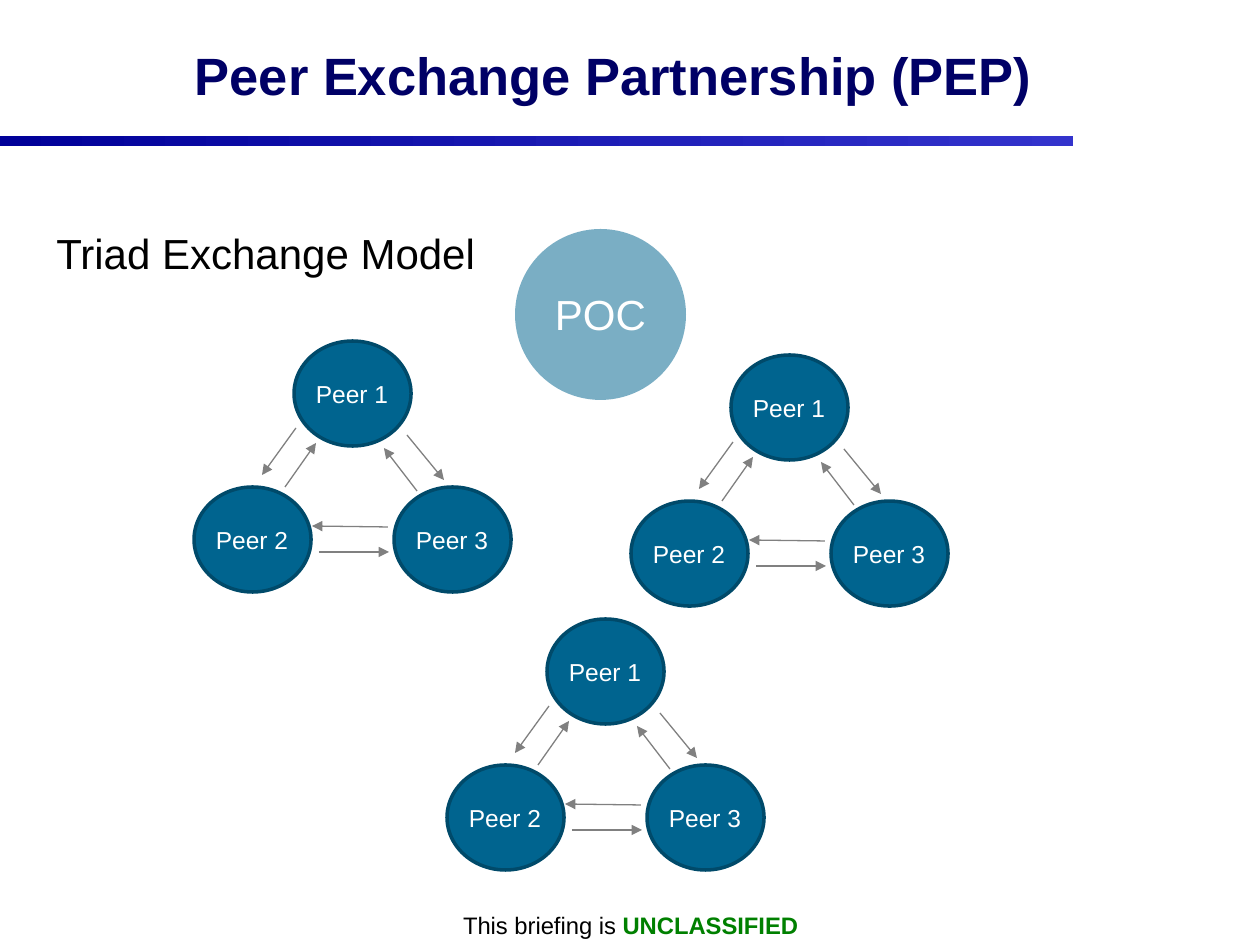
from pptx import Presentation
from pptx import util as u
from pptx.dml.color import RGBColor
from pptx.enum import shapes, text
from pptx.oxml import parse_xml
from pptx.oxml.ns import nsdecls, qn

PX = u.Inches(1) / 126
FONT = "Arial"
BLUE, EDGE, GREY, WHITE, BLACK = "00648F", "004A6A", "808080", "FFFFFF", "000000"

TRIADS = [(194, 341), (631, 355), (447, 619)]
PEERS = {"Peer 1": (100, 0), "Peer 2": (0, 146), "Peer 3": (200, 146)}
PEER_SIZE = (117, 105)
EXCHANGES = [
    ((125, 211), (195, 211)), ((194, 186), (118, 185)),
    ((213, 94), (250, 139)), ((223, 150), (190, 107)),
    ((102, 87), (68, 134)), ((91, 146), (122, 102)),
]


def px(*lengths):
    return [u.Emu(round(length * PX)) for length in lengths]


def colour(value):
    return RGBColor.from_string(value)


def apply(target, values):
    for name, value in values.items():
        setattr(target, name, value)


def write(shape, spans, size, align=text.PP_ALIGN.LEFT, **frame_format):
    """Fill a shape with one paragraph of (words, colour, bold) spans."""
    frame = shape.text_frame
    apply(frame, frame_format)
    para = frame.paragraphs[0]
    para.alignment = align
    for words, hue, bold in spans:
        span = para.add_run()
        span.text = words
        apply(span.font, {"name": FONT, "size": u.Pt(size), "bold": bold})
        span.font.color.rgb = colour(hue)


def add_label(page, bounds, spans, size, align=text.PP_ALIGN.CENTER, **frame_format):
    values = {"word_wrap": True, "vertical_anchor": text.MSO_ANCHOR.MIDDLE,
              "auto_size": text.MSO_AUTO_SIZE.SHAPE_TO_FIT_TEXT}
    box = page.shapes.add_textbox(*px(*bounds))
    write(box, spans, size, align, **{**values, **frame_format})


def add_plain(page, kind, bounds):
    shape = page.shapes.add_shape(kind, *px(*bounds))
    shape.shadow.inherit = False
    shape.line.fill.background()
    return shape


def add_circle(page, bounds):
    circle = add_plain(page, shapes.MSO_SHAPE.OVAL, bounds)
    circle.fill.solid()
    circle.fill.fore_color.rgb = colour(BLUE)
    return circle


def add_arrow(page, start, end):
    arrow = page.shapes.add_connector(shapes.MSO_CONNECTOR.STRAIGHT, *px(*start, *end))
    arrow.line.color.rgb = colour(GREY)
    arrow.line.width = u.Pt(0.75)
    arrow.line._get_or_add_ln().append(
        parse_xml(f'<a:tailEnd {nsdecls("a")} type="triangle"/>'))
    arrow._element.spPr.append(parse_xml(f'<a:effectLst {nsdecls("a")}/>'))


def add_triad(page, left, top):
    """Draw three peers and the arrows between them."""
    for name, (dx, dy) in PEERS.items():
        x, y = left + dx, top + dy
        circle = add_circle(page, (x, y, *PEER_SIZE))
        circle.line.color.rgb = colour(EDGE)
        circle.line.width = u.Pt(2)
        add_label(page, (x + 6, y + 31, 104, 43), [(name, WHITE, False)], 14)
    for ends in EXCHANGES:
        add_arrow(page, *[(left + dx, top + dy) for dx, dy in ends])


def add_poc(page):
    circle = add_circle(page, (515, 229, 171, 171))
    hue = circle._element.spPr.find(f'{qn("a:solidFill")}/{qn("a:srgbClr")}')
    hue.append(parse_xml(f'<a:alpha {nsdecls("a")} val="52000"/>'))
    add_label(page, (542, 282, 117, 63), [("POC", WHITE, False)], 24)


def add_rule(page):
    rule = add_plain(page, shapes.MSO_SHAPE.RECTANGLE, (0, 136, 1073, 10))
    rule.fill.gradient()
    rule.fill.gradient_angle = 0
    for stop, hue in zip(rule.fill.gradient_stops, ("000099", "3333CC")):
        stop.color.rgb = colour(hue)


def add_title(page):
    title = page.shapes.title
    bounds = px(136, 23, 955, 103)
    apply(title, dict(zip(("left", "top", "width", "height"), bounds)))
    write(title, [("Peer Exchange Partnership (PEP)", "000066", True)], 30,
          text.PP_ALIGN.CENTER, vertical_anchor=text.MSO_ANCHOR.MIDDLE,
          auto_size=text.MSO_AUTO_SIZE.NONE)


def add_marking(page):
    side, edge = px(10, 5)
    add_label(page, (318, 906, 625, 39),
              [("This briefing is ", BLACK, False), ("UNCLASSIFIED", "008000", True)],
              13.6, vertical_anchor=text.MSO_ANCHOR.TOP, margin_left=side,
              margin_right=side, margin_top=edge, margin_bottom=edge)


def main():
    deck = Presentation()
    deck.slide_width, deck.slide_height = px(1260, 945)
    page = deck.slides.add_slide(deck.slide_layouts[5])
    add_title(page)
    add_marking(page)
    add_rule(page)
    add_label(page, (44, 221, 455, 63), [("Triad Exchange Model", BLACK, False)], 24,
              text.PP_ALIGN.LEFT, vertical_anchor=text.MSO_ANCHOR.TOP)
    for left, top in TRIADS:
        add_triad(page, left, top)
    add_poc(page)
    deck.save("out.pptx")


if __name__ == "__main__":
    main()
